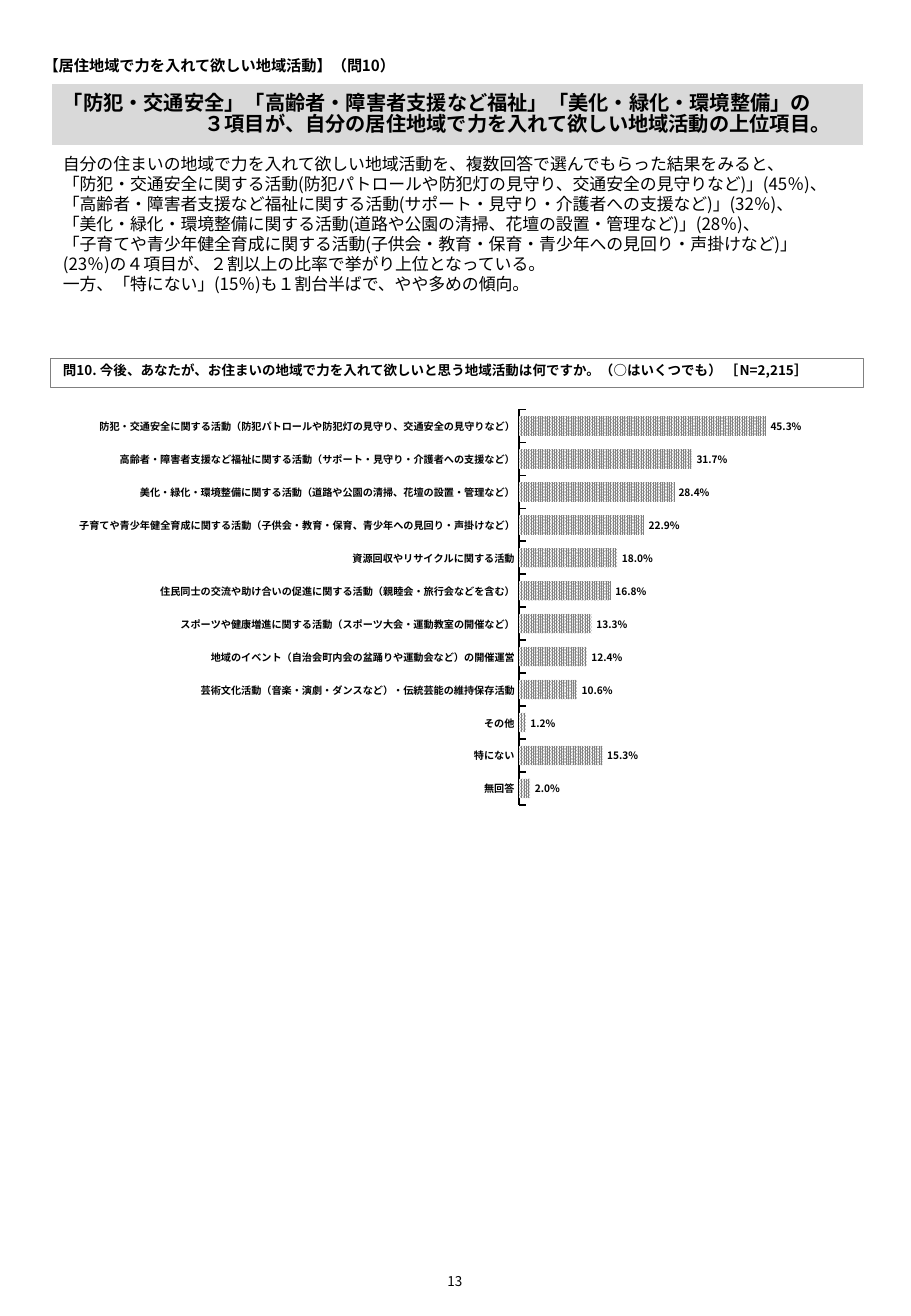
"""Build the survey page on the local activities residents want strengthened."""
from pptx import Presentation
from pptx.chart.data import CategoryChartData
from pptx.dml.color import RGBColor as RGB
from pptx.enum.chart import XL_CHART_TYPE as ChartType
from pptx.enum.chart import XL_LABEL_POSITION as LabelPosition
from pptx.enum.chart import XL_TICK_LABEL_POSITION as TickLabel
from pptx.enum.chart import XL_TICK_MARK as TickMark
from pptx.enum.dml import MSO_PATTERN as Pattern
from pptx.enum.lang import MSO_LANGUAGE_ID as Language
from pptx.enum.shapes import MSO_SHAPE as Shape
from pptx.enum.text import MSO_ANCHOR as Anchor
from pptx.enum.text import PP_ALIGN as Align
from pptx.oxml import parse_xml
from pptx.oxml.ns import nsdecls, qn
from pptx.util import Pt

FONT = "Noto Sans CJK JP"
COLORS = {"text": "000000", "band": "D9D9D9", "paper": "FFFFFF", "gray": "808080"}
LEFT, WIDTH = 30.2, 481.7

HEADLINE = [
    "「防犯・交通安全」「高齢者・障害者支援など福祉」「美化・緑化・環境整備」の",
    "３項目が、自分の居住地域で力を入れて欲しい地域活動の上位項目。",
]
SUMMARY = [
    "自分の住まいの地域で力を入れて欲しい地域活動を、複数回答で選んでもらった結果をみると、",
    "「防犯・交通安全に関する活動(防犯パトロールや防犯灯の見守り、交通安全の見守りなど)」(45％)、",
    "「高齢者・障害者支援など福祉に関する活動(サポート・見守り・介護者への支援など)」(32％)、",
    "「美化・緑化・環境整備に関する活動(道路や公園の清掃、花壇の設置・管理など)」(28％)、",
    "「子育てや青少年健全育成に関する活動(子供会・教育・保育・青少年への見回り・声掛けなど)」",
    "(23％)の４項目が、２割以上の比率で挙がり上位となっている。",
    "一方、「特にない」(15％)も１割台半ばで、やや多めの傾向。",
]
QUESTION = ("問10. 今後、あなたが、お住まいの地域で力を入れて欲しいと思う地域活動は何ですか。"
            "（○はいくつでも） ［N=2,215］")
ANSWERS = {
    "防犯・交通安全に関する活動（防犯パトロールや防犯灯の見守り、交通安全の見守りなど）": 0.453,
    "高齢者・障害者支援など福祉に関する活動（サポート・見守り・介護者への支援など）": 0.317,
    "美化・緑化・環境整備に関する活動（道路や公園の清掃、花壇の設置・管理など）": 0.284,
    "子育てや青少年健全育成に関する活動（子供会・教育・保育、青少年への見回り・声掛けなど）": 0.229,
    "資源回収やリサイクルに関する活動": 0.18,
    "住民同士の交流や助け合いの促進に関する活動（親睦会・旅行会などを含む）": 0.168,
    "スポーツや健康増進に関する活動（スポーツ大会・運動教室の開催など）": 0.133,
    "地域のイベント（自治会町内会の盆踊りや運動会など）の開催運営": 0.124,
    "芸術文化活動（音楽・演劇・ダンスなど）・伝統芸能の維持保存活動": 0.106,
    "その他": 0.012,
    "特にない": 0.153,
    "無回答": 0.02,
}


class SurveyPage:
    """Hold the style and the current slide."""

    def __init__(self, deck):
        """Add a blank page to the deck."""
        self.page = deck.slides.add_slide(deck.slide_layouts[6])

    def color(self, name):
        """Return a palette colour."""
        return RGB.from_string(COLORS[name])

    def style_font(self, font, size, bold):
        """Apply the page font."""
        font.name, font.size, font.bold = FONT, Pt(size), bold
        font.color.rgb = self.color("text")

    def add_east_asian_font(self, element):
        """Repeat each Latin font as the East Asian font."""
        for latin in list(element.iter(qn("a:latin"))):
            latin.addnext(parse_xml(f'<a:ea {nsdecls("a")} typeface="{FONT}"/>'))

    def fill_text(self, box, lines, size, bold=False, align=Align.LEFT, anchor=Anchor.TOP,
                  inset=3.6, spacing=1.0, gap=0, last_indent=0):
        """Fill a box with one paragraph per line."""
        frame = box.text_frame
        frame.word_wrap, frame.vertical_anchor = True, anchor
        frame.margin_top = Pt(inset)
        for index, line in enumerate(lines):
            para = frame.add_paragraph() if index else frame.paragraphs[0]
            para.alignment, para.line_spacing = align, spacing
            para.space_before = Pt(gap if index else 0)
            span = para.add_run()
            span.text = line
            span.font.language_id = Language.JAPANESE
            self.style_font(span.font, size, bold)
        if last_indent:
            properties = para._p.get_or_add_pPr()
            properties.set("marL", str(Pt(last_indent)))
            properties.set("indent", "0")
        self.add_east_asian_font(box._element)

    def add_text(self, left, top, width, height, lines, size, **style):
        """Add a plain text box."""
        box = self.page.shapes.add_textbox(Pt(left), Pt(top), Pt(width), Pt(height))
        self.fill_text(box, lines, size, **style)

    def add_panel(self, top, height, lines, size, fill, line, line_width, **style):
        """Add a full-width rectangle with text."""
        box = self.page.shapes.add_shape(
            Shape.RECTANGLE, Pt(LEFT), Pt(top), Pt(WIDTH), Pt(height))
        box.shadow.inherit = False
        if fill:
            box.fill.solid()
            box.fill.fore_color.rgb = self.color(fill)
        else:
            box.fill.background()
        box.line.color.rgb = self.color(line)
        box.line.width = Pt(line_width)
        self.fill_text(box, lines, size, bold=True, **style)

    def add_bars(self, left, top, width, height, answers, plot_area):
        """Add the bar chart of answers."""
        data = CategoryChartData()
        data.categories = list(answers)
        data.add_series("Series 1", list(answers.values()))
        chart = self.page.shapes.add_chart(
            ChartType.BAR_CLUSTERED, Pt(left), Pt(top), Pt(width), Pt(height), data).chart
        chart.has_legend = chart.has_title = False
        self.style_font(chart.font, 6, True)
        self.style_axes(chart.category_axis, chart.value_axis)
        plot = chart.plots[0]
        plot.gap_width, plot.vary_by_categories = 70, False
        fill = plot.series[0].format.fill
        fill.patterned()
        fill.pattern = Pattern.PERCENT_90
        fill.fore_color.rgb = self.color("gray")
        fill.back_color.rgb = self.color("paper")
        plot.series[0].invert_if_negative = False
        plot.has_data_labels = True
        labels = plot.data_labels
        labels.show_value, labels.position = True, LabelPosition.OUTSIDE_END
        labels.number_format, labels.number_format_is_linked = "0.0%", False
        self.style_font(labels.font, 6, True)
        self.place_plot(chart, plot_area)
        self.add_east_asian_font(chart._chartSpace)

    def style_axes(self, categories, values):
        """Show only the category axis, first answer on top."""
        categories.reverse_order = True
        categories.major_tick_mark = TickMark.INSIDE
        categories.format.line.color.rgb = self.color("text")
        categories.format.line.width = Pt(1)
        self.style_font(categories.tick_labels.font, 6, True)
        values.minimum_scale, values.maximum_scale = 0, 0.8
        values.has_major_gridlines = False
        values.major_tick_mark = TickMark.NONE
        values.tick_label_position = TickLabel.NONE
        values.format.line.fill.background()

    def place_plot(self, chart, plot_area):
        """Fix the inner plot area as fractions of the chart."""
        sizes = "".join(f'<c:{key} val="{value}"/>' for key, value in zip("xywh", plot_area))
        layout = parse_xml(
            f'<c:layout {nsdecls("c")}><c:manualLayout><c:layoutTarget val="inner"/>'
            f'<c:xMode val="edge"/><c:yMode val="edge"/>{sizes}</c:manualLayout></c:layout>')
        area = next(chart._chartSpace.iter(qn("c:plotArea")))
        for old in area.findall(qn("c:layout")):
            area.remove(old)
        area.insert(0, layout)


def main():
    """Build and save the deck."""
    deck = Presentation()
    deck.slide_width, deck.slide_height = Pt(540), Pt(779.8)
    survey = SurveyPage(deck)
    survey.add_text(206.6, 738, 126, 41.8, ["13"], 8, align=Align.CENTER, anchor=Anchor.MIDDLE)
    survey.add_panel(49.7, 36.7, HEADLINE, 12, "band", "paper", 0.75,
                     anchor=Anchor.MIDDLE, spacing=0.84, last_indent=84)
    survey.add_panel(212.4, 17.3, [QUESTION], 8, None, "gray", 0.5, inset=2)
    survey.add_text(LEFT, 89.3, WIDTH, 113.8, SUMMARY, 10, spacing=0.88, gap=1.2)
    survey.add_text(18.7, 31.7, 425.5, 18, ["【居住地域で力を入れて欲しい地域活動】（問10）"], 9,
                    bold=True, inset=1.6)
    survey.add_bars(38.9, 232.6, 537.8, 252, ANSWERS, (0.5, 0.04, 0.48, 0.93))
    deck.save("out.pptx")


if __name__ == "__main__":
    main()
